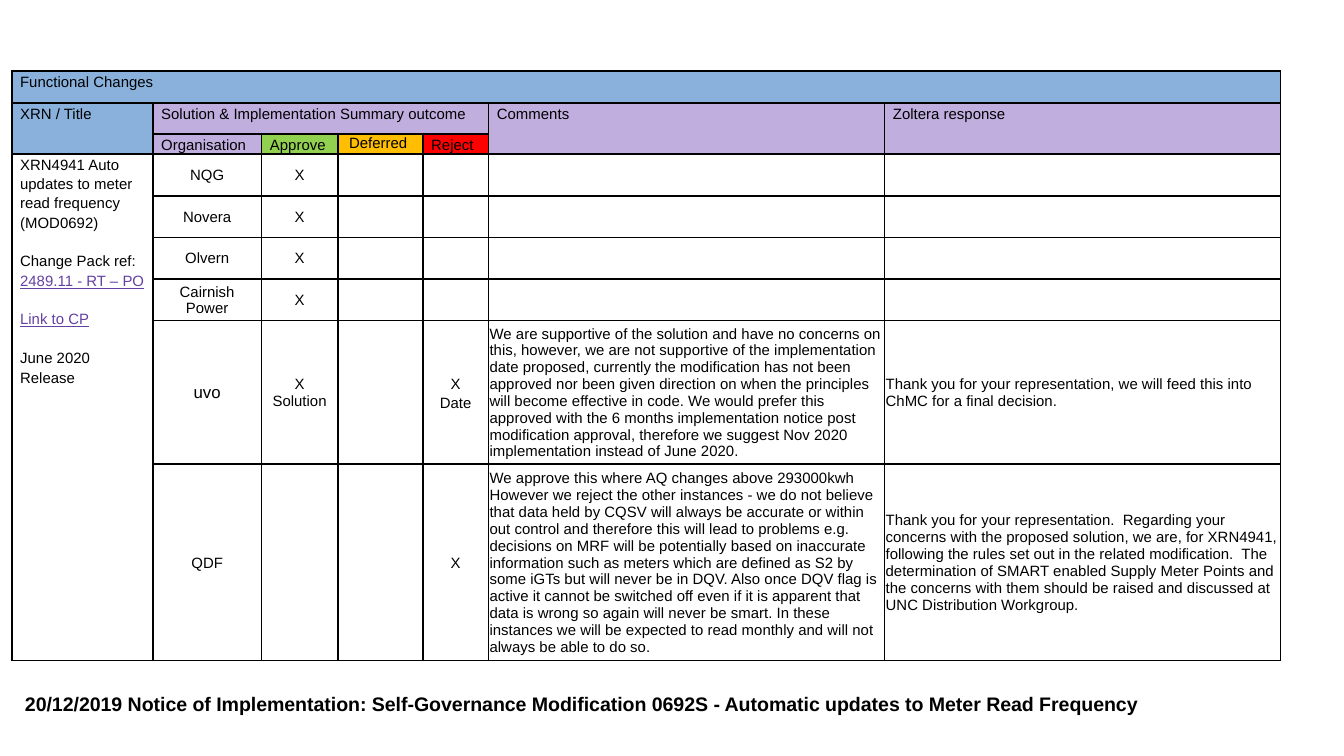
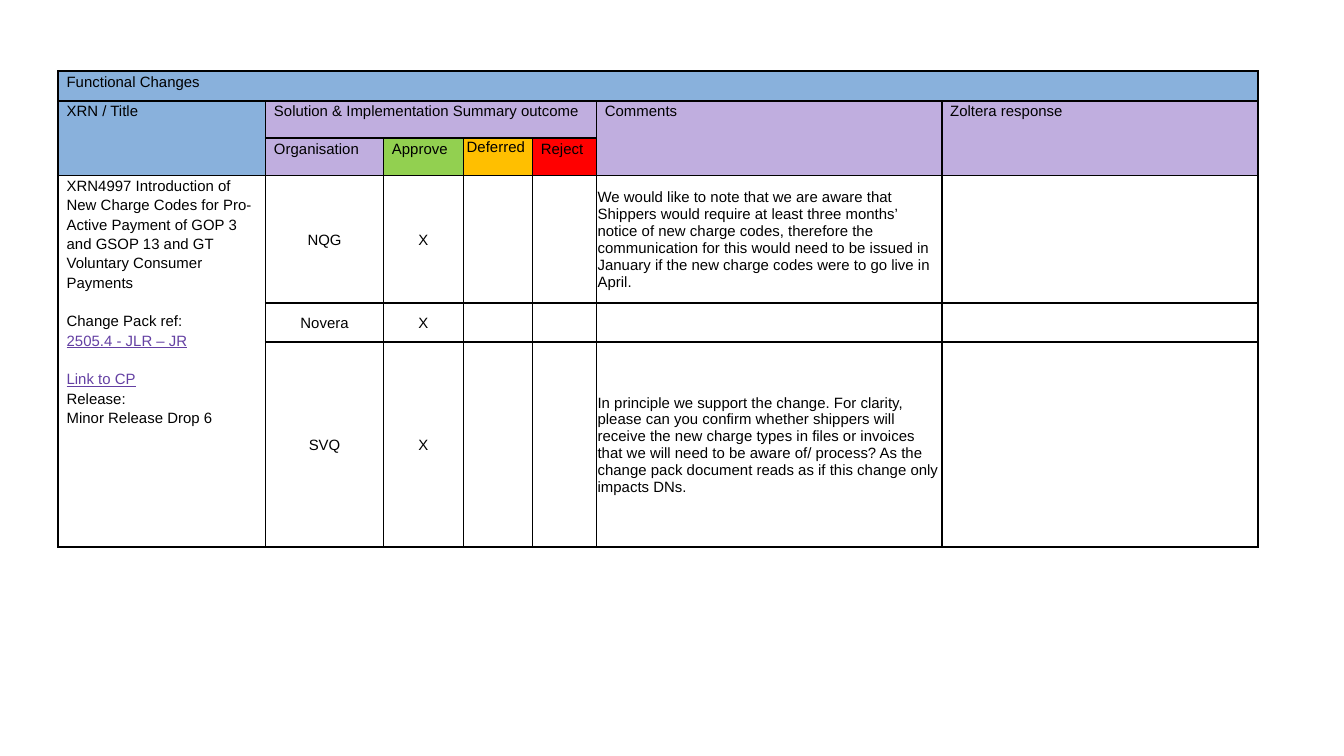
from lxml.etree import SubElement
from pptx import Presentation
from pptx.dml.color import RGBColor
from pptx.enum.text import MSO_ANCHOR as Anchor, PP_ALIGN as Align
from pptx.oxml.ns import qn
from pptx.util import Pt

BLACK, LINK = "000000", "6440A3"
BLUE, LILAC = "89B1DC", "C0AEDF"
GREEN, AMBER, RED = "92D050", "FFBF00", "FF0000"
FONT, BODY_SIZE = "Arial", 8
LOOSE = 1.15          # line spacing of headings and titles
BLANK_LINE = 10.4     # gap between blocks of the change title
WIDE, NARROW = (4.5, 0), (0.6, 0.6)   # side and top cell margins


def rgb(value):
    return RGBColor.from_string(value)


def write(frame, text, size=BODY_SIZE, bold=False, color=BLACK,
          align=Align.LEFT, spacing=1.0, gaps=(), links=()):
    """Write one paragraph per line; gaps lists the lines set off from above."""
    frame.word_wrap = True
    for index, line in enumerate(text.split("\n")):
        paragraph = frame.add_paragraph() if index else frame.paragraphs[0]
        paragraph.alignment = align
        paragraph.line_spacing = spacing
        if index in gaps:
            paragraph.space_before = Pt(BLANK_LINE)
        link = next((name for name in links if name in line), "")
        before, _, after = line.partition(link) if link else (line, "", "")
        for part in filter(None, (before, link, after)):
            run = paragraph.add_run()
            run.text = part
            font = run.font
            font.name, font.size, font.bold = FONT, Pt(size), bold
            font.underline = part == link
            font.color.rgb = rgb(LINK if part == link else color)
        if not line:
            SubElement(paragraph._p, qn("a:endParaRPr"), sz=str(size * 100))


class Deck:
    def __init__(self, width, height):
        self.presentation = Presentation()
        self.presentation.slide_width = Pt(width)
        self.presentation.slide_height = Pt(height)
        self.slide = None

    def new_slide(self):
        self.slide = self.presentation.slides.add_slide(
            self.presentation.slide_layouts[6])

    def note(self, text, left, top, width, height, **style):
        box = self.slide.shapes.add_textbox(
            Pt(left), Pt(top), Pt(width), Pt(height))
        write(box.text_frame, text, **style)

    def cell(self, cell, text, margins=NARROW, anchor=Anchor.MIDDLE, **style):
        side, top = margins
        cell.margin_left = cell.margin_right = Pt(side)
        cell.margin_top, cell.margin_bottom = Pt(top), 0
        cell.vertical_anchor = anchor
        write(cell.text_frame, text, **style)

    def heading(self, cell, text, fill, **style):
        cell.fill.solid()
        cell.fill.fore_color.rgb = rgb(fill)
        style = {"margins": WIDE, "spacing": LOOSE, **style}
        self.cell(cell, text, anchor=Anchor.TOP, **style)

    def border(self, cell):
        properties = cell._tc.get_or_add_tcPr()
        for side in ("lnL", "lnR", "lnT", "lnB"):
            line = SubElement(properties, qn(f"a:{side}"), w=str(Pt(1)))
            ink = SubElement(line, qn("a:solidFill"))
            SubElement(ink, qn("a:srgbClr"), val=BLACK)

    def grid(self, left, top, columns, rows):
        table = self.slide.shapes.add_table(
            len(rows), len(columns), Pt(left), Pt(top),
            Pt(sum(columns)), Pt(sum(rows))).table
        table.first_row = table.horz_banding = False
        for column, width in zip(table.columns, columns):
            column.width = Pt(width)
        for row, height in zip(table.rows, rows):
            row.height = Pt(height)
        for cell in table.iter_cells():
            self.border(cell)
            cell.fill.background()
        return table

    def change_table(self, left, columns, rows, title, gaps, links, responses):
        table = self.grid(left, 38, columns, rows)
        last = len(rows) - 1

        # Headings: first and last cell of each span, text and fill
        for start, end, text, fill in (
                ((0, 0), (0, 6), "Functional Changes", BLUE),
                ((1, 0), (2, 0), "XRN / Title", BLUE),
                ((1, 1), (1, 4), "Solution & Implementation Summary outcome",
                 LILAC),
                ((1, 5), (2, 5), "Comments", LILAC),
                ((1, 6), (2, 6), "Zoltera response", LILAC)):
            table.cell(*start).merge(table.cell(*end))
            self.heading(table.cell(*start), text, fill)
        self.heading(table.cell(2, 1), "Organisation", LILAC)
        self.heading(table.cell(2, 2), "Approve", GREEN)
        self.heading(table.cell(2, 3), "Deferred ", AMBER, margins=NARROW,
                     spacing=1.0, align=Align.CENTER)
        self.heading(table.cell(2, 4), "Reject", RED)

        # Change title down the side
        table.cell(3, 0).merge(table.cell(last, 0))
        self.cell(table.cell(3, 0), title, margins=WIDE, anchor=Anchor.TOP,
                  spacing=LOOSE, gaps=gaps, links=links)

        # One row per organisation
        for row, (name, approve, reject, comment, reply, size) in enumerate(
                responses, start=3):
            centred = {"align": Align.CENTER}
            self.cell(table.cell(row, 1), name, size=size, **centred)
            self.cell(table.cell(row, 2), approve, **centred)
            self.cell(table.cell(row, 3), "", **centred)
            self.cell(table.cell(row, 4), reject, margins=WIDE,
                      spacing=LOOSE, **centred)
            self.cell(table.cell(row, 5), comment)
            self.cell(table.cell(row, 6), reply)


def response(name, approve="X", reject="", comment="", reply="",
             size=BODY_SIZE):
    return name, approve, reject, comment, reply, size


def main():
    deck = Deck(720, 405)

    # Slide 1: meter read frequency
    deck.new_slide()
    deck.change_table(
        left=6.3,
        columns=[75.6, 58.3, 40.8, 45.6, 35.2, 212.2, 212.2],
        rows=[17.2, 16.6, 10.8, *[22.3] * 4, 76.8, 105.5],
        title="XRN4941 Auto updates to meter read frequency (MOD0692)\n"
              "Change Pack ref: 2489.11 - RT – PO\n"
              "Link to CP\n"
              "June 2020 Release",
        gaps=(1, 2, 3),
        links=("2489.11 - RT – PO", "Link to CP"),
        responses=[
            response("NQG"),
            response("Novera"),
            response("Olvern"),
            response("Cairnish\nPower"),
            response(
                "uvo", "X\nSolution", "X\nDate",
                "We are supportive of the solution and have no concerns on "
                "this, however, we are not supportive of the implementation "
                "date proposed, currently the modification has not been "
                "approved nor been given direction on when the principles "
                "will become effective in code. We would prefer this approved "
                "with the 6 months implementation notice post modification "
                "approval, therefore we suggest Nov 2020 implementation "
                "instead of June 2020.",
                "Thank you for your representation, we will feed this into "
                "ChMC for a final decision.",
                size=9),
            response(
                "QDF", "", "X",
                "We approve this where AQ changes above 293000kwh However we "
                "reject the other instances - we do not believe that data "
                "held by CQSV will always be accurate or within out control "
                "and therefore this will lead to problems e.g. decisions on "
                "MRF will be potentially based on inaccurate information such "
                "as meters which are defined as S2 by some iGTs but will "
                "never be in DQV. Also once DQV flag is active it cannot be "
                "switched off even if it is apparent that data is wrong so "
                "again will never be smart. In these instances we will be "
                "expected to read monthly and will not always be able to do "
                "so.",
                "Thank you for your representation.  Regarding your concerns "
                "with the proposed solution, we are, for XRN4941, following "
                "the rules set out in the related modification.  The "
                "determination of SMART enabled Supply Meter Points and the "
                "concerns with them should be raised and discussed at UNC "
                "Distribution Workgroup."),
        ])
    deck.note("20/12/2019 Notice of Implementation: Self-Governance "
              "Modification 0692S - Automatic updates to Meter Read Frequency",
              6.3, 367.2, 680, 20, size=10.5, bold=True)

    # Slide 2: new charge codes
    deck.new_slide()
    deck.change_table(
        left=31.2,
        columns=[111.1, 63.2, 42.8, 37, 34.3, 185, 169.4],
        rows=[16, 20, 20, 68.4, 20.8, 109.8],
        title="XRN4997 Introduction of New Charge Codes for Pro-Active "
              "Payment of GOP 3 and GSOP 13 and GT Voluntary Consumer "
              "Payments\n"
              "Change Pack ref:\n"
              "2505.4 - JLR – JR\n"
              "Link to CP\n"
              "Release:\n"
              "Minor Release Drop 6",
        gaps=(1, 3),
        links=("2505.4 - JLR – JR", "Link to CP"),
        responses=[
            response(
                "NQG",
                comment="We would like to note that we are aware that "
                "Shippers would require at least three months’ notice of new "
                "charge codes, therefore the communication for this would "
                "need to be issued in January if the new charge codes were to "
                "go live in April."),
            response("Novera"),
            response(
                "SVQ",
                comment="In principle we support the change. For clarity, "
                "please can you confirm whether shippers will receive the new "
                "charge types in files or invoices that we will need to be "
                "aware of/ process? As the change pack document reads as if "
                "this change only impacts DNs."),
        ])

    deck.presentation.save("out.pptx")


if __name__ == "__main__":
    main()
